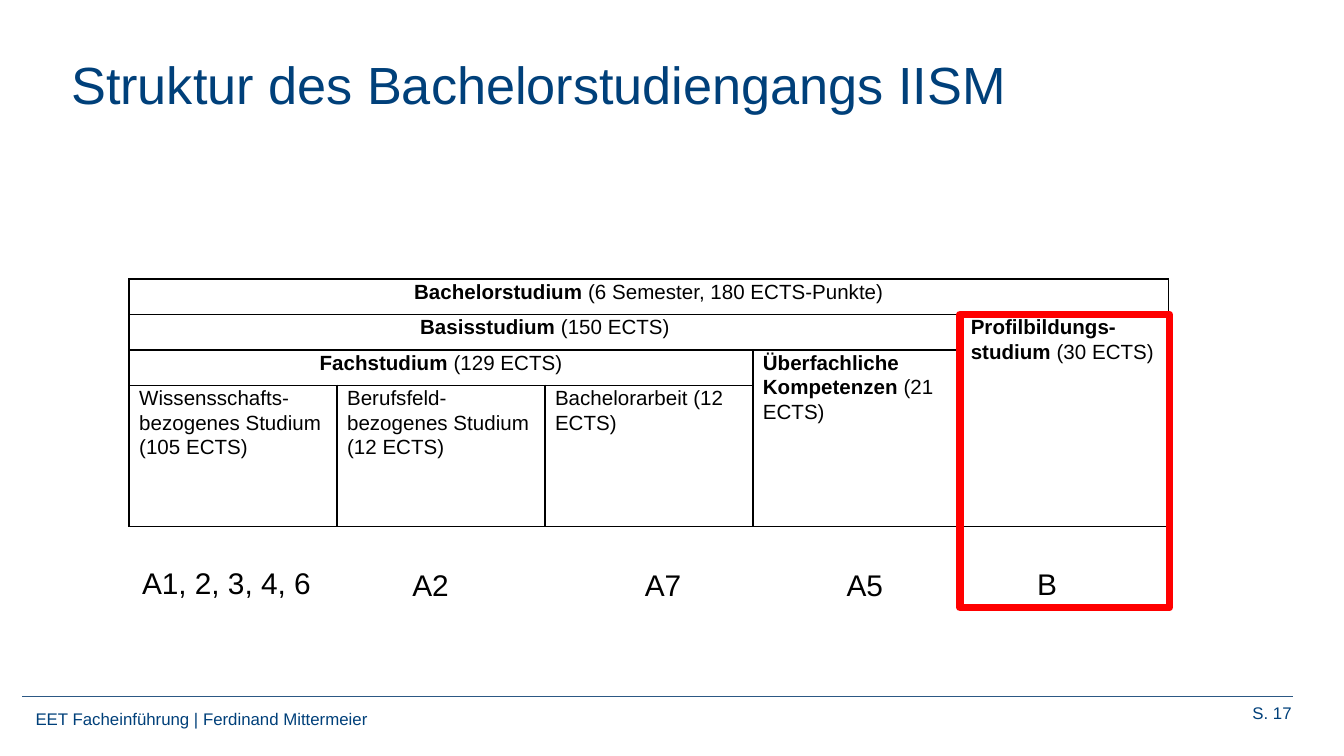
from pptx import Presentation
from pptx.dml.color import RGBColor
from pptx.enum.shapes import MSO_CONNECTOR, MSO_SHAPE
from pptx.enum.text import MSO_ANCHOR, MSO_AUTO_SIZE, PP_ALIGN
from pptx.oxml import parse_xml
from pptx.oxml.ns import nsdecls
from pptx.util import Pt

NAVY = RGBColor(0x00, 0x40, 0x7A)
RULE_BLUE = RGBColor(0x2C, 0x58, 0x84)
BLACK = RGBColor(0x00, 0x00, 0x00)
RED = RGBColor(0xFF, 0x00, 0x00)

# row, column, row span, column span, bold text, regular text
CELLS = [
    (0, 0, 1, 5, "Bachelorstudium", " (6 Semester, 180 ECTS-Punkte)"),
    (1, 0, 1, 4, "Basisstudium", " (150 ECTS)"),
    (1, 4, 3, 1, "Profilbildungs-studium", " (30 ECTS)"),
    (2, 0, 1, 3, "Fachstudium ", "(129 ECTS)"),
    (2, 3, 2, 1, "Überfachliche Kompetenzen", " (21 ECTS)"),
    (3, 0, 1, 1, "", "Wissensschafts-bezogenes Studium (105 ECTS)"),
    (3, 1, 1, 1, "", "Berufsfeld-bezogenes Studium (12 ECTS)"),
    (3, 2, 1, 1, "", "Bachelorarbeit (12 ECTS)"),
]
ROW_HEIGHTS = (19, 19, 19, 75.5)

# text, left offset, top offset, width
LABELS = [
    ("A1, 2, 3, 4, 6", 0, 0, 106.5),
    ("A2", 144.8, 1.5, 34.5),
    ("A7", 269.4, 1.5, 34.5),
    ("A5", 377.4, 1.5, 34.5),
    ("B", 479.6, 0.75, 25),
]


def style(p, size, color, align=PP_ALIGN.LEFT):
    p.alignment = align
    p.font.name = "Arial"
    p.font.size = Pt(size)
    p.font.color.rgb = color


def add_text(s, text, left, top, width, height, size, color,
             align=PP_ALIGN.LEFT, wrap=True):
    box = s.shapes.add_textbox(Pt(left), Pt(top), Pt(width), Pt(height))
    tf = box.text_frame
    tf.word_wrap = wrap
    if not wrap:
        tf.auto_size = MSO_AUTO_SIZE.SHAPE_TO_FIT_TEXT
    p = tf.paragraphs[0]
    p.text = text
    style(p, size, color, align)


def add_title(s, left, top, width, height):
    title = s.shapes.title
    title.left, title.top = Pt(left), Pt(top)
    title.width, title.height = Pt(width), Pt(height)
    tf = title.text_frame
    tf.text = "Struktur des Bachelorstudiengangs IISM"
    tf.vertical_anchor = MSO_ANCHOR.TOP
    tf.margin_top = Pt(7)
    tf.auto_size = MSO_AUTO_SIZE.NONE
    style(tf.paragraphs[0], 28, NAVY)


def add_footer(s, left, top, width):
    line = s.shapes.add_connector(
        MSO_CONNECTOR.STRAIGHT, Pt(left), Pt(top), Pt(left + width), Pt(top))
    line.line.color.rgb = RULE_BLUE
    line.line.width = Pt(0.75)
    line._element.spPr.append(parse_xml(f"<a:effectLst {nsdecls('a')}/>"))
    add_text(s, "EET Facheinführung | Ferdinand Mittermeier",
             left, top + 3, 529, 13.5, 9, NAVY)
    add_text(s, "S. 17", left + width - 77.5, top, 84, 18, 9, NAVY, PP_ALIGN.RIGHT)


def add_borders(cell):
    tcPr = cell._tc.get_or_add_tcPr()
    for i, side in enumerate(("lnL", "lnR", "lnT", "lnB")):
        tcPr.insert(i, parse_xml(
            f'<a:{side} {nsdecls("a")} w="{Pt(1)}"><a:solidFill>'
            f'<a:srgbClr val="{BLACK}"/></a:solidFill></a:{side}>'))


def add_structure_table(s, left, top, width):
    table = s.shapes.add_table(4, 5, Pt(left), Pt(top), Pt(width),
                               Pt(sum(ROW_HEIGHTS))).table
    table.first_row = table.horz_banding = False
    for column in table.columns:
        column.width = Pt(width / 5)
    for row, height in zip(table.rows, ROW_HEIGHTS):
        row.height = Pt(height)
    for cell in table.iter_cells():
        cell.fill.background()
        cell.margin_left = cell.margin_right = Pt(5.4)
        cell.margin_top = cell.margin_bottom = 0
        add_borders(cell)
    for row, col, rows, cols, bold, regular in CELLS:
        cell = table.cell(row, col)
        if rows * cols > 1:
            cell.merge(table.cell(row + rows - 1, col + cols - 1))
        p = cell.text_frame.paragraphs[0]
        p.line_spacing = 1.07
        if bold:
            r = p.add_run()
            r.text = bold
            r.font.bold = True
        p.add_run().text = regular
        style(p, 11, BLACK, PP_ALIGN.CENTER if cols > 1 else PP_ALIGN.LEFT)


def add_module_labels(s, left, top):
    for text, dx, dy, width in LABELS:
        add_text(s, text, left + dx, top + dy, width, 26.6, 16, BLACK, wrap=False)


def add_highlight(s, left, top, width, height):
    frame = s.shapes.add_shape(MSO_SHAPE.RECTANGLE, Pt(left), Pt(top),
                               Pt(width), Pt(height))
    frame.shadow.inherit = False
    frame.fill.background()
    frame.line.color.rgb = RED
    frame.line.width = Pt(4)


def main():
    prs = Presentation()
    prs.slide_width, prs.slide_height = Pt(720), Pt(405)
    s = prs.slides.add_slide(prs.slide_layouts[5])
    add_footer(s, 12, 373, 680.5)
    add_title(s, 31, 21, 578, 67.5)
    add_module_labels(s, 69, 298.8)
    add_structure_table(s, 69.2, 149.5, 557)
    add_highlight(s, 514.2, 168.5, 112.3, 157)
    prs.save("out.pptx")


if __name__ == "__main__":
    main()
